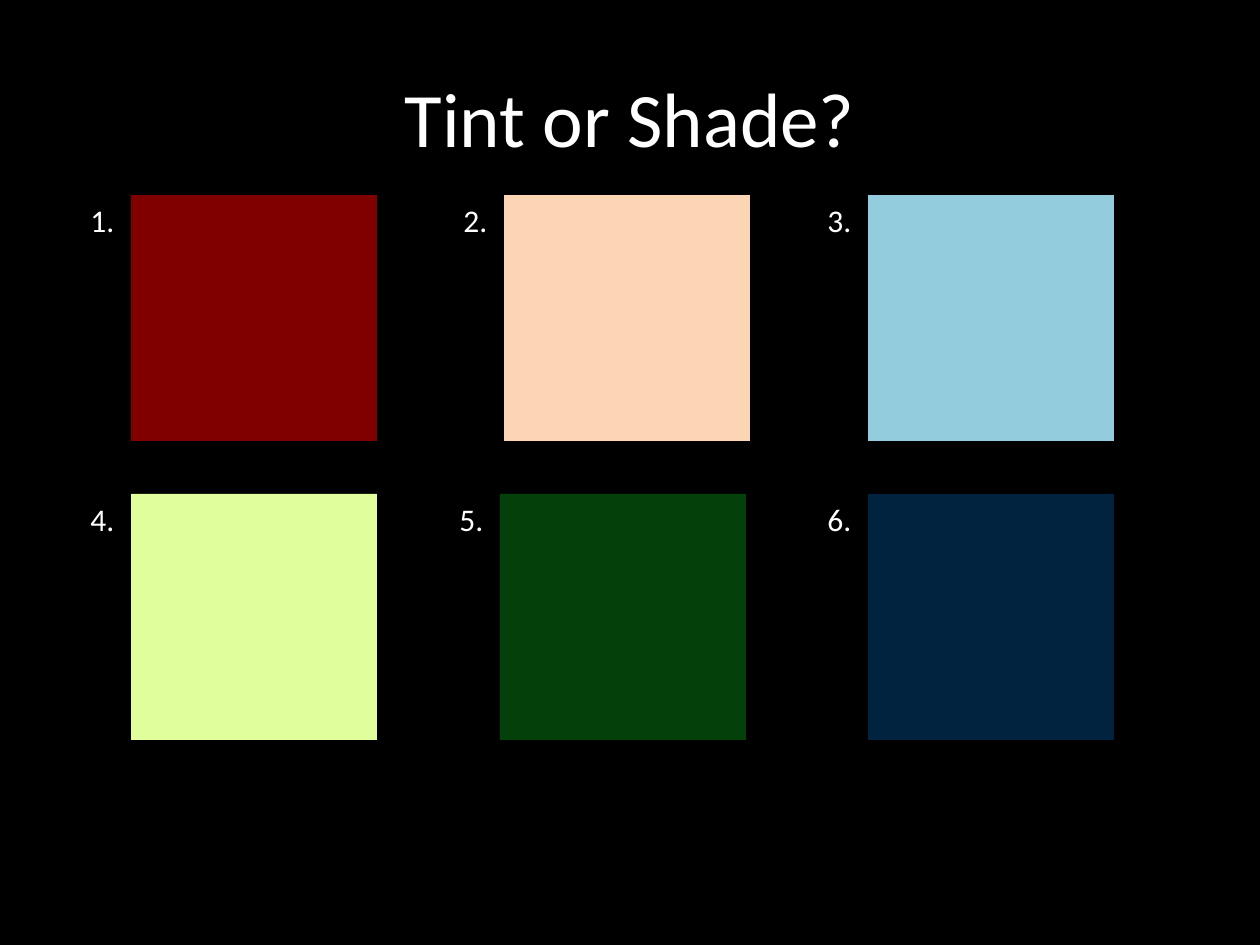
from pptx import Presentation
from pptx import util as u
from pptx.dml.color import RGBColor
from pptx.enum import shapes, text

FONT = "Calibri"
WHITE = "FFFFFF"
BLACK = "000000"
TITLE = "Tint or Shade?"

# Rows of swatches: top, then (left, colour) of each
ROWS = [
    (195, [(131, "800000"), (504, "FCD5B5"), (868, "93CDDD")]),
    (494, [(131, "E0FF9C"), (500, "03400A"), (868, "012340")]),
]
SWATCH = 246
LABEL_WIDTH, LABEL_HEIGHT = 53, 51


def px(length):
    return u.Emu(round(length * 914400 / 126))


def colour(value):
    return RGBColor.from_string(value)


def place(shape, left, top, width, height):
    shape.left, shape.top = px(left), px(top)
    shape.width, shape.height = px(width), px(height)


def write(shape, words, size, align=text.PP_ALIGN.LEFT, anchor=text.MSO_ANCHOR.TOP):
    frame = shape.text_frame
    frame.word_wrap = True
    frame.vertical_anchor = anchor
    paragraph = frame.paragraphs[0]
    paragraph.alignment = align
    run = paragraph.add_run()
    run.text = words
    run.font.name = FONT
    run.font.size = u.Pt(size)
    run.font.color.rgb = colour(WHITE)


def add_swatch(slide, left, top, fill):
    swatch = slide.shapes.add_shape(
        shapes.MSO_SHAPE.RECTANGLE, px(left), px(top), px(SWATCH), px(SWATCH))
    swatch.shadow.inherit = False
    swatch.fill.solid()
    swatch.fill.fore_color.rgb = colour(fill)
    swatch.line.fill.background()


def add_label(slide, right, top, words):
    label = slide.shapes.add_textbox(
        px(right - LABEL_WIDTH), px(top), px(LABEL_WIDTH), px(LABEL_HEIGHT))
    write(label, words, 18)
    label.text_frame.auto_size = text.MSO_AUTO_SIZE.SHAPE_TO_FIT_TEXT


def main():
    presentation = Presentation()
    presentation.slide_width, presentation.slide_height = px(1260), px(945)
    slide = presentation.slides.add_slide(presentation.slide_layouts[5])
    slide.background.fill.solid()
    slide.background.fill.fore_color.rgb = colour(BLACK)

    # Title
    title = slide.shapes.title
    place(title, 63, 38, 1134, 158)
    write(title, TITLE, 44, text.PP_ALIGN.CENTER, text.MSO_ANCHOR.MIDDLE)

    # Numbered swatches
    number = 0
    for top, swatches in ROWS:
        for left, fill in swatches:
            number += 1
            add_swatch(slide, left, top, fill)
            add_label(slide, left, top, f"{number}.")

    presentation.save("out.pptx")


if __name__ == "__main__":
    main()
